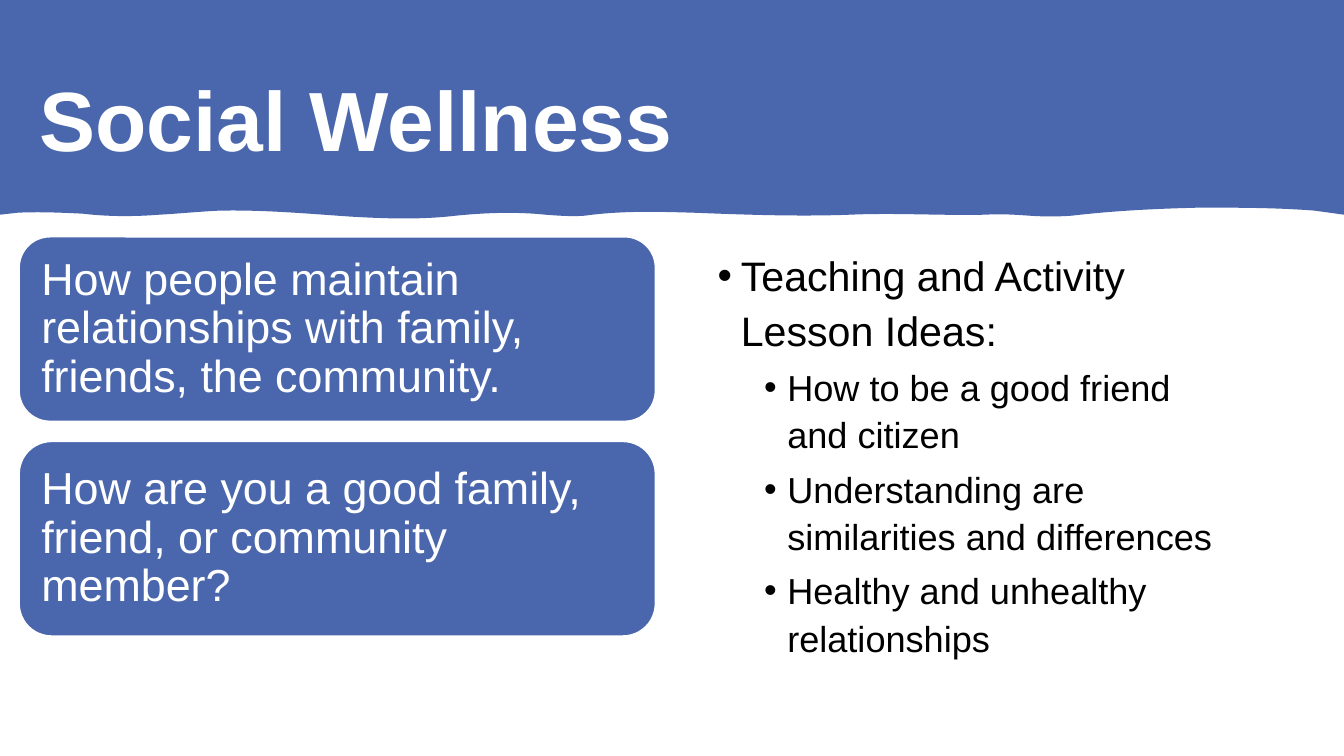
"""Builds the Social Wellness slide with a wavy banner, two cards and a lesson list."""
import pptx
import pptx.util
import pptx.dml.color
import pptx.enum.shapes
import pptx.enum.text
import lxml.etree

Inches = pptx.util.Inches
Pt = pptx.util.Pt
KIND = pptx.enum.shapes.MSO_SHAPE
MIDDLE = pptx.enum.text.MSO_ANCHOR.MIDDLE
SPACE = "{http://schemas.openxmlformats.org/drawingml/2006/main}"
BLUE, WHITE, BLACK = "4A66AC", "FFFFFF", "000000"
WIDE, HIGH = 13.33, 7.5

TITLE = "Social Wellness"
CARDS = [
    ("How people maintain relationships with family, friends, the community.", 2.35, 1.83),
    ("How are you a good family, friend, or community member?", 4.38, 1.93),
]
IDEAS = [
    (0, "Teaching and Activity Lesson Ideas:"),
    (1, "How to be a good friend and citizen"),
    (1, "Understanding are similarities and differences"),
    (1, "Healthy and unhealthy relationships"),
]
LEVELS = [
    {"size": 29.4, "left": 0.23, "before": 9.2},
    {"size": 25.8, "left": 0.69, "before": 4.6},
]
RIGHT = [(WIDE, 0), (WIDE, 2.13), (13.04, 2.09)]
WAVE = [
    ((12.66, 2.06), (12.28, 2.06), (11.9, 2.06)),
    ((11.48, 2.07), (11.05, 2.09), (10.63, 2.14)),
    ((10.49, 2.15), (10.35, 2.15), (10.21, 2.14)),
    ((10.07, 2.13), (9.92, 2.12), (9.77, 2.13)),
    ((9.33, 2.14), (8.88, 2.11), (8.43, 2.13)),
    ((7.91, 2.15), (7.39, 2.13), (6.87, 2.11)),
    ((6.51, 2.1), (6.16, 2.09), (5.8, 2.14)),
    ((5.67, 2.15), (5.54, 2.14), (5.41, 2.13)),
    ((5.12, 2.1), (4.82, 2.11), (4.52, 2.14)),
    ((4.18, 2.18), (3.84, 2.17), (3.49, 2.15)),
    ((3.05, 2.12), (2.61, 2.08), (2.17, 2.09)),
    ((1.97, 2.1), (1.77, 2.12), (1.58, 2.13)),
    ((1.33, 2.15), (1.07, 2.15), (0.82, 2.12)),
    ((0.61, 2.11), (0.4, 2.1), (0.18, 2.11)),
]
LEFT = [(0, 2.13)]


def color(code):
    return pptx.dml.color.RGBColor.from_string(code)


def paint(shape, fill, line=None):
    shape.shadow.inherit = False
    shape.fill.solid()
    shape.fill.fore_color.rgb = color(fill)
    if line:
        shape.line.color.rgb = color(line)
        shape.line.width = Pt(1)
    else:
        shape.line.fill.background()


def style(para, size, code, bold=False):
    for run in para.runs:
        run.font.name = "Arial"
        run.font.size = Pt(size)
        run.font.bold = bold
        run.font.color.rgb = color(code)


def bullet(para, left):
    props = para._p.get_or_add_pPr()
    props.set("marL", str(Inches(left)))
    props.set("indent", str(Inches(-0.23)))
    lxml.etree.SubElement(props, SPACE + "buFont").set("typeface", "Arial")
    lxml.etree.SubElement(props, SPACE + "buChar").set("char", "•")


def bend(shape):
    lines = list(shape._element.iter(SPACE + "lnTo"))[len(RIGHT):-len(LEFT)]
    for i in range(0, len(lines), 3):
        curve = lxml.etree.Element(SPACE + "cubicBezTo")
        lines[i].addprevious(curve)
        for line in lines[i:i + 3]:
            curve.append(line[0])
            line.getparent().remove(line)


def add_text(slide, left, top, width, height):
    box = slide.shapes.add_textbox(Inches(left), Inches(top), Inches(width), Inches(height))
    box.text_frame.word_wrap = True
    return box.text_frame


def add_block(slide, kind, left, top, width, height, *look):
    spot = [Inches(part) for part in (left, top, width, height)]
    paint(slide.shapes.add_shape(kind, *spot), *look)


def add_banner(slide):
    points = RIGHT + [point for curve in WAVE for point in curve] + LEFT
    build = slide.shapes.build_freeform(0, 0)
    build.add_line_segments([(Inches(x), Inches(y)) for x, y in points], close=True)
    banner = build.convert_to_shape()
    bend(banner)
    paint(banner, BLUE)
    frame = add_text(slide, 0.29, 0.44, 11.5, 1.45)
    frame.vertical_anchor = MIDDLE
    frame.text = TITLE
    style(frame.paragraphs[0], 60, WHITE, True)


def add_card(slide, text, top, height):
    add_block(slide, KIND.ROUNDED_RECTANGLE, 0.19, top, 6.31, height, BLUE, WHITE)
    frame = add_text(slide, 0.28, top + 0.09, 6.13, height - 0.18)
    frame.vertical_anchor = MIDDLE
    for side in ("left", "top", "right", "bottom"):
        setattr(frame, "margin_" + side, Inches(0.13))
    frame.text = text
    para = frame.paragraphs[0]
    para.line_spacing = 0.9
    style(para, 32, WHITE)


def add_ideas(slide):
    frame = add_text(slide, 7.02, 2.39, 5.27, 4.32)
    frame.text = "\n".join(text for level, text in IDEAS)
    for para, (level, text) in zip(frame.paragraphs, IDEAS):
        look = LEVELS[level]
        para.level = level
        para.line_spacing = 1.1
        para.space_before = Pt(look["before"])
        style(para, look["size"], BLACK)
        bullet(para, look["left"])


def main():
    deck = pptx.Presentation()
    deck.slide_width, deck.slide_height = Inches(WIDE), Inches(HIGH)
    slide = deck.slides.add_slide(deck.slide_layouts[6])
    add_block(slide, KIND.RECTANGLE, 0, 0, WIDE, HIGH, WHITE)
    add_banner(slide)
    for card in CARDS:
        add_card(slide, *card)
    add_ideas(slide)
    deck.save("out.pptx")


if __name__ == "__main__":
    main()
